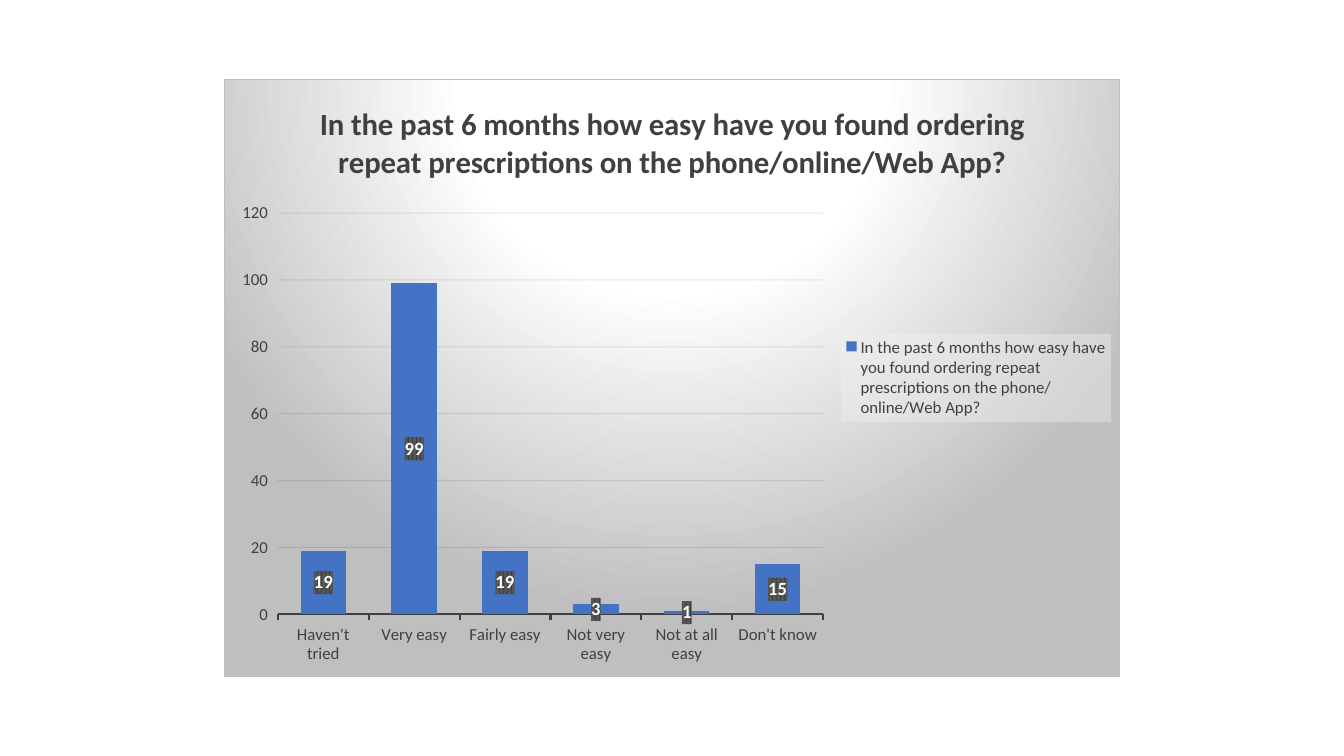
from lxml.etree import SubElement
from pptx import Presentation
from pptx.chart.data import CategoryChartData
from pptx.dml.color import RGBColor
from pptx.enum.chart import (XL_CHART_TYPE, XL_LABEL_POSITION,
                             XL_LEGEND_POSITION, XL_TICK_MARK)
from pptx.oxml import parse_xml
from pptx.oxml.ns import nsdecls, qn
from pptx.util import Inches, Pt

WHITE = RGBColor(0xFF, 0xFF, 0xFF)
PALE = RGBColor(0xF2, 0xF2, 0xF2)
SILVER = RGBColor(0xBF, 0xBF, 0xBF)
SLATE = RGBColor(0x59, 0x59, 0x59)
CHARCOAL = RGBColor(0x40, 0x40, 0x40)
INK = RGBColor(0x0D, 0x0D, 0x0D)
BLACK = RGBColor(0, 0, 0)
BLUE = RGBColor(0x44, 0x72, 0xC4)

QUESTION = ("In the past 6 months how easy have you found ordering repeat "
            "prescriptions on the phone/online/Web App?")
ANSWERS = {"Haven't tried": 19, "Very easy": 99, "Fairly easy": 19,
           "Not very easy": 3, "Not at all easy": 1, "Don't know": 15}


def color_xml(color, alpha=100):
    return (f'<a:srgbClr val="{color}">'
            f'<a:alpha val="{alpha * 1000}"/></a:srgbClr>')


def glow_xml():
    """Radial fill centred above the chart, with its thin border."""
    stops = "".join(f'<a:gs pos="{position * 1000}">{color_xml(color)}</a:gs>'
                    for position, color in ((0, WHITE), (39, WHITE), (100, SILVER)))
    return (f'<a:gradFill><a:gsLst>{stops}</a:gsLst><a:path path="circle">'
            '<a:fillToRect l="50000" t="-80000" r="50000" b="180000"/>'
            f'</a:path></a:gradFill><a:ln w="{Pt(0.75)}">'
            f'<a:solidFill>{color_xml(SILVER)}</a:solidFill></a:ln>')


def add_style(text_properties, content):
    """Put a shape style just before the text properties of a chart part."""
    text_properties.addprevious(parse_xml(
        f'<c:spPr {nsdecls("c", "a")}>{content}</c:spPr>'))


class SurveySlide:
    font_name = "Calibri"

    def __init__(self, presentation):
        self.width = presentation.slide_width
        self.height = presentation.slide_height
        self.slide = presentation.slides.add_slide(presentation.slide_layouts[6])

    def set_font(self, font, size, color=CHARCOAL, bold=False):
        font.name = self.font_name
        font.size = Pt(size)
        font.bold = bold
        font.color.rgb = color

    def add_column_chart(self, left, top, width, height, name, answers):
        """Place the chart; lengths are shares of the slide's size."""
        data = CategoryChartData()
        data.categories = list(answers)
        data.add_series(name, list(answers.values()))
        chart = self.slide.shapes.add_chart(
            XL_CHART_TYPE.COLUMN_CLUSTERED,
            int(left * self.width), int(top * self.height),
            int(width * self.width), int(height * self.height), data).chart
        self.set_font(chart.font, 10, BLACK)
        chart_space = chart._chartSpace
        add_style(chart_space.find(qn("c:txPr")), glow_xml())
        chart_space.find(qn("c:date1904")).addnext(parse_xml(
            f'<c:roundedCorners {nsdecls("c")} val="0"/>'))
        self.add_title(chart, name)
        self.style_columns(chart.plots[0])
        self.style_axes(chart)
        self.add_legend(chart)

    def add_title(self, chart, text):
        chart.has_title = True
        chart.chart_title.include_in_layout = False
        run = chart.chart_title.text_frame.paragraphs[0].add_run()
        run.text = text
        self.set_font(run.font, 22, bold=True)

    def style_columns(self, plot):
        plot.gap_width = 100
        plot.vary_by_categories = False
        fill = plot.series[0].format.fill
        fill.solid()
        fill.fore_color.rgb = BLUE
        labels = plot.series[0].data_labels
        labels.show_value = True
        labels.position = XL_LABEL_POSITION.CENTER
        self.set_font(labels.font, 13.3, WHITE, bold=True)
        add_style(labels._element.find(qn("c:txPr")),
                  f'<a:pattFill prst="pct75"><a:fgClr>{color_xml(CHARCOAL)}</a:fgClr>'
                  f'<a:bgClr>{color_xml(SLATE)}</a:bgClr></a:pattFill>')

    def style_axes(self, chart):
        categories, values = chart.category_axis, chart.value_axis
        for axis in (categories, values):
            self.set_font(axis.tick_labels.font, 12)
            axis.major_tick_mark = XL_TICK_MARK.OUTSIDE
        categories.format.line.color.rgb = CHARCOAL
        categories.format.line.width = Pt(1.5)
        values.format.line.fill.background()
        values.minimum_scale, values.maximum_scale, values.major_unit = 0, 120, 20
        values.has_major_gridlines = True
        grid = values.major_gridlines
        grid.format.line.color.rgb = INK
        grid.format.line.width = Pt(0.75)
        grid_color = next(values._element.find(qn("c:majorGridlines"))
                          .iter(qn("a:srgbClr")))
        SubElement(grid_color, qn("a:alpha"), val="10000")

    def add_legend(self, chart):
        chart.has_legend = True
        legend = chart.legend
        legend.position = XL_LEGEND_POSITION.RIGHT
        legend.include_in_layout = False
        self.set_font(legend.font, 12)
        add_style(legend._element.find(qn("c:txPr")),
                  f"<a:solidFill>{color_xml(PALE, 39)}</a:solidFill>")


def main():
    presentation = Presentation()
    presentation.slide_width = Inches(13.33)
    presentation.slide_height = Inches(7.5)
    survey = SurveySlide(presentation)
    survey.add_column_chart(1 / 6, 0.105, 2 / 3, 0.79, QUESTION, ANSWERS)
    presentation.save("out.pptx")


if __name__ == "__main__":
    main()
